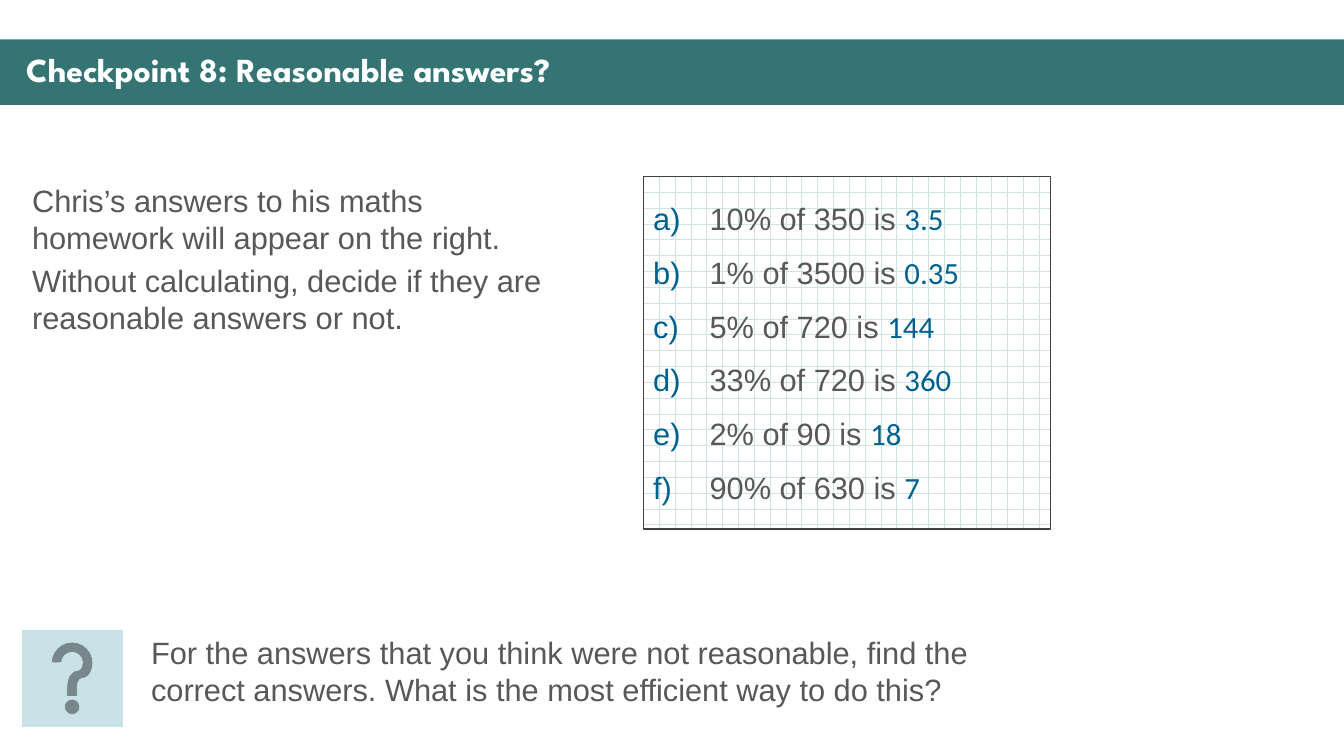
from lxml import etree
from pptx import Presentation
from pptx.dml.color import RGBColor
from pptx.enum.dml import MSO_PATTERN
from pptx.enum.shapes import MSO_SHAPE as Preset
from pptx.enum.text import MSO_ANCHOR as Anchor, MSO_AUTO_SIZE as AutoSize, PP_ALIGN as Align
from pptx.oxml.ns import qn
from pptx.util import Pt

EMU_PER_PX = 9144
TEAL = RGBColor(0x34, 0x75, 0x74)
PALE_BLUE = RGBColor(0xC8, 0xE2, 0xE8)
GRID_GREEN = RGBColor(0xD0, 0xE3, 0xE3)
WHITE = RGBColor(0xFF, 0xFF, 0xFF)
TEXT_GREY = RGBColor(0x58, 0x58, 0x58)
ANSWER_BLUE = RGBColor(0x00, 0x62, 0x8C)
BORDER_GREY = RGBColor(0x41, 0x41, 0x41)

INSTRUCTIONS = [
    "Chris’s answers to his maths homework will appear on the right.",
    "Without calculating, decide if they are reasonable answers or not.",
]
FOLLOW_UP = [
    "For the answers that you think were not reasonable, find the correct answers. "
    "What is the most efficient way to do this?",
]
HOMEWORK = [
    ("10% of 350 is ", "3.5"),
    ("1% of 3500 is ", "0.35"),
    ("5% of 720 is ", "144"),
    ("33% of 720 is ", "360"),
    ("2% of 90 is ", "18"),
    ("90% of 630 is ", "7"),
]


def px(*lengths):
    """Turn px lengths into EMU."""
    return [length * EMU_PER_PX for length in lengths]


def add_run(paragraph, text, color, font="Arial", size=22, bold=False):
    """Add one formatted run to a paragraph."""
    run = paragraph.add_run()
    run.text = text
    run.font.name = font
    run.font.size = Pt(size)
    run.font.bold = bold
    run.font.color.rgb = color


def next_paragraph(frame, index):
    """Return the first paragraph of a frame, or a new one after it."""
    return frame.add_paragraph() if index else frame.paragraphs[0]


def add_panel(slide, preset, box, fill, line=None, width=1):
    """Add a preset shape with a solid fill and an optional outline."""
    panel = slide.shapes.add_shape(preset, *px(*box))
    panel.shadow.inherit = False
    panel.fill.solid()
    panel.fill.fore_color.rgb = fill
    if line is None:
        panel.line.fill.background()
    else:
        panel.line.color.rgb = line
        panel.line.width = Pt(width)
    return panel


def add_heading(slide, text):
    """Place the title on its teal band."""
    band = add_panel(slide, Preset.RECTANGLE, (0, 39, 1333, 65), TEAL)
    heading = slide.shapes.title
    heading.element.addprevious(band.element)
    heading.left, heading.top, heading.width, heading.height = px(16, 48, 1304, 47)
    frame = heading.text_frame
    frame.auto_size = AutoSize.NONE
    frame.vertical_anchor = Anchor.MIDDLE
    paragraph = frame.paragraphs[0]
    paragraph.alignment = Align.LEFT
    paragraph.line_spacing = 0.9
    add_run(paragraph, text, WHITE, "League Spartan", 24, True)


def add_prose(slide, box, sentences):
    """Add a wrapped text box with one paragraph per sentence."""
    frame = slide.shapes.add_textbox(*px(*box)).text_frame
    frame.word_wrap = True
    frame.auto_size = AutoSize.SHAPE_TO_FIT_TEXT
    for index, sentence in enumerate(sentences):
        paragraph = next_paragraph(frame, index)
        paragraph.space_before = Pt(4.4)
        add_run(paragraph, sentence, TEXT_GREY)


def letter_paragraph(paragraph, color):
    """Number a paragraph a), b), c) with a hanging indent."""
    properties = paragraph._p.get_or_add_pPr()
    (indent,) = px(56)
    properties.set("marL", str(indent))
    properties.set("indent", str(-indent))
    bullet_color = etree.SubElement(properties, qn("a:buClr"))
    etree.SubElement(bullet_color, qn("a:srgbClr"), val=str(color))
    etree.SubElement(properties, qn("a:buFont"), typeface="Arial")
    etree.SubElement(properties, qn("a:buAutoNum"), type="alphaLcParenR")


def add_homework(slide, box, questions):
    """Add the squared-paper sheet with lettered questions and answers."""
    sheet = add_panel(slide, Preset.RECTANGLE, box, WHITE, BORDER_GREY)
    sheet.fill.patterned()
    sheet.fill.pattern = MSO_PATTERN.DOTTED_GRID
    sheet.fill.fore_color.rgb = GRID_GREEN
    sheet.fill.back_color.rgb = WHITE
    frame = sheet.text_frame
    frame.word_wrap = True
    frame.vertical_anchor = Anchor.MIDDLE
    for index, (question, answer) in enumerate(questions):
        paragraph = next_paragraph(frame, index)
        paragraph.alignment = Align.LEFT
        paragraph.space_after = Pt(12)
        letter_paragraph(paragraph, ANSWER_BLUE)
        add_run(paragraph, question, TEXT_GREY)
        add_run(paragraph, answer, ANSWER_BLUE, "Calibri")


def main():
    """Build and save the checkpoint slide."""
    deck = Presentation()
    deck.slide_width, deck.slide_height = px(1333, 750)
    slide = deck.slides.add_slide(deck.slide_layouts.get_by_name("Title Only"))
    add_heading(slide, "Checkpoint 8: Reasonable answers?")
    add_panel(slide, Preset.ACTION_BUTTON_HELP, (22, 625, 99, 96), PALE_BLUE, PALE_BLUE, 0.5)
    add_prose(slide, (22, 175, 537, 166), INSTRUCTIONS)
    add_prose(slide, (140, 624, 836, 84), FOLLOW_UP)
    add_homework(slide, (638, 175, 404, 350), HOMEWORK)
    deck.save("out.pptx")


if __name__ == "__main__":
    main()
